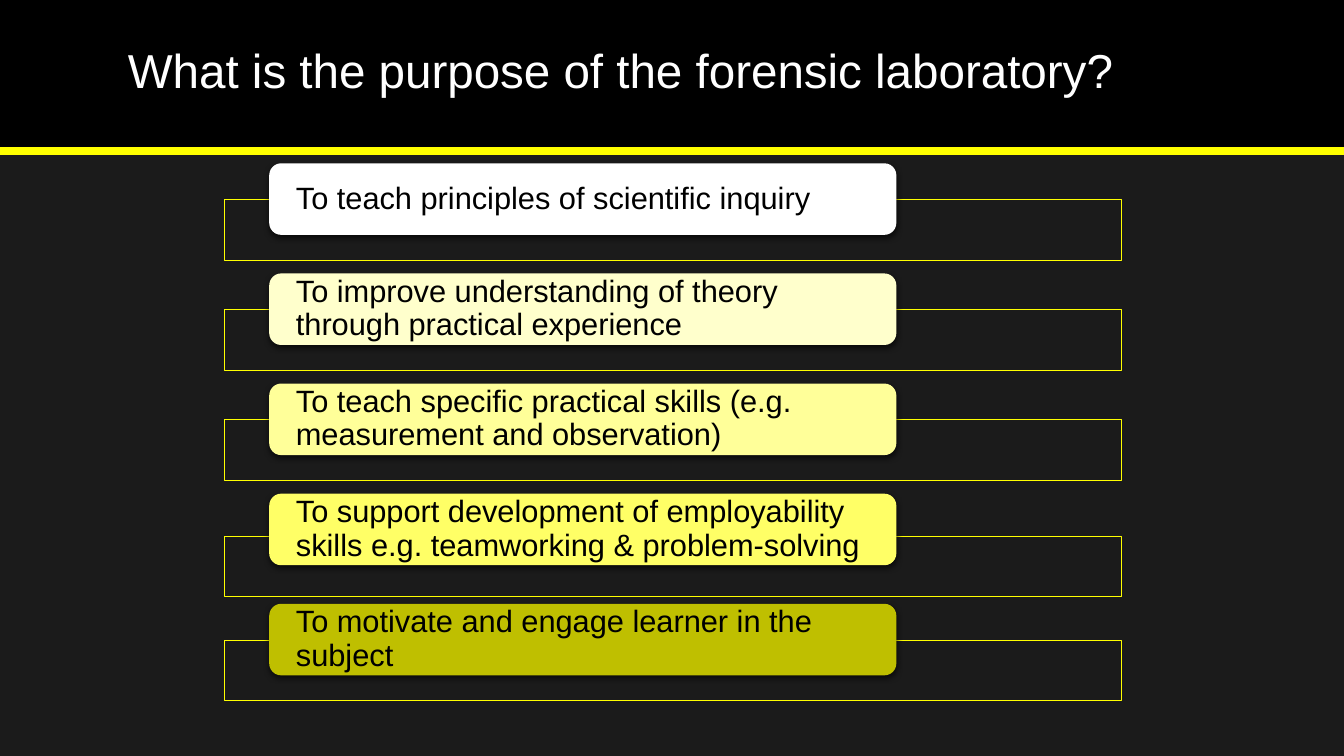
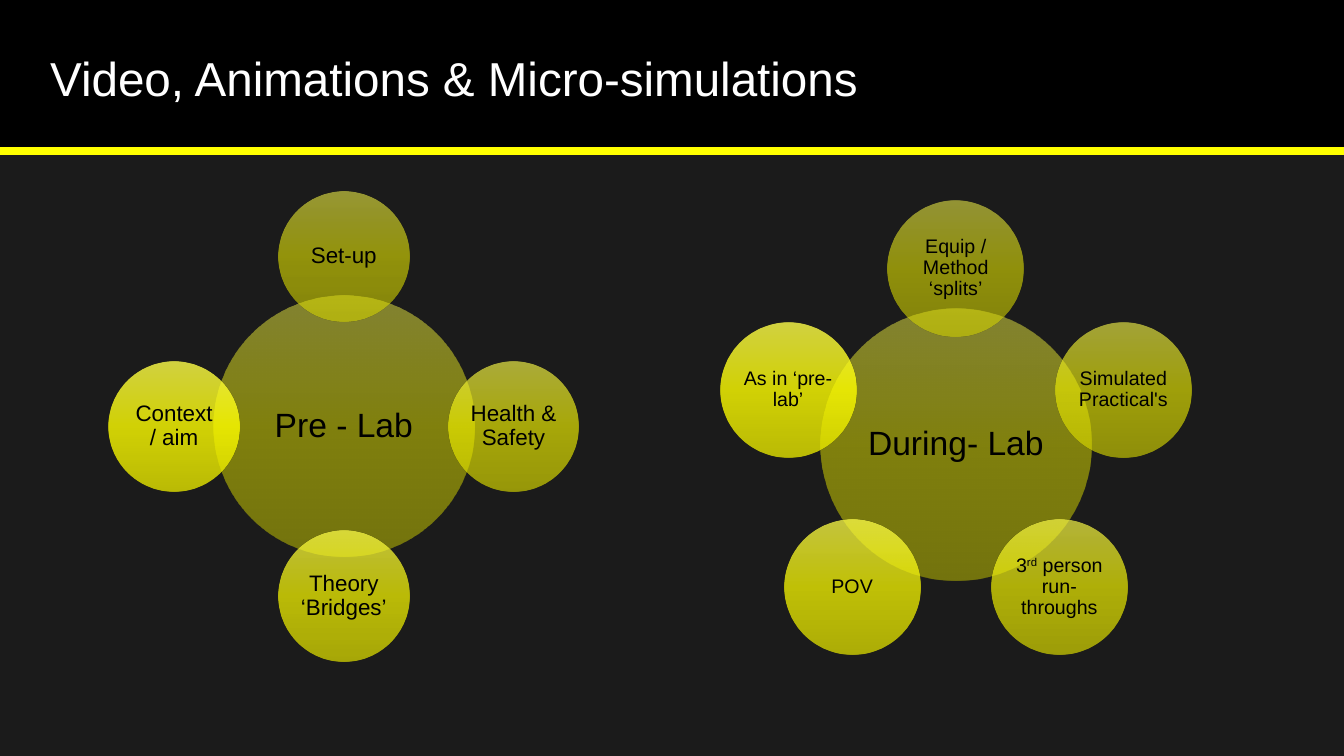
from math import cos, radians, sin

from lxml.etree import SubElement
from pptx import Presentation
from pptx.dml.color import RGBColor
from pptx.enum.shapes import MSO_CONNECTOR, MSO_SHAPE
from pptx.enum.text import MSO_ANCHOR, PP_ALIGN
from pptx.oxml.ns import qn
from pptx.util import Inches, Pt

# Shared look
COLORS = {
    "background": "1B1B1B",
    "band": "000000",
    "accent": "FFFF00",
    "title": "FFFFFF",
    "text": "000000",
}
WIDTH, HEIGHT, BAND_HEIGHT = 13.33, 7.5, 1.5
TITLE = {"size": Pt(34), "name": "Arial"}

# Slide content
PURPOSES = [
    ("To teach principles of scientific inquiry", "FFFFFF"),
    ("To improve understanding of theory through practical experience", "FFFFCC"),
    ("To teach specific practical skills (e.g. measurement and observation)", "FFFF99"),
    ("To support development of employability skills e.g. teamworking & problem-solving",
     "FFFF66"),
    ("To motivate and engage learner in the subject", "BFBF00"),
]
FIRST_ROW, LAST_ROW = 1.62, 5.99
FRAME_OFFSETS = [0.36, 0.36, 0.36, 0.42, 0.36]
PRE_LAB = ["Set-up", "Health & Safety", "Theory ‘Bridges’", "Context / aim"]
# Text between carets is superscript
DURING_LAB = ["Equip / Method ‘splits’", "Simulated Practical's",
              "3^rd^ person run-throughs", "POV", "As in ‘pre-lab’"]


def rgb(value):
    return RGBColor.from_string(value)


def write_text(sp, text, font, color=COLORS["text"], align=PP_ALIGN.LEFT,
               margins=(0.1, 0.05)):
    tf = sp.text_frame
    mx, my = (Inches(m) for m in margins)
    frame = {"word_wrap": True, "vertical_anchor": MSO_ANCHOR.MIDDLE,
             "margin_left": mx, "margin_right": mx,
             "margin_top": my, "margin_bottom": my}
    for key, value in frame.items():
        setattr(tf, key, value)
    p = tf.paragraphs[0]
    p.alignment = align
    p.line_spacing = 0.9
    for i, part in enumerate(text.split("^")):
        r = p.add_run()
        r.text = part
        for key, value in font.items():
            setattr(r.font, key, value)
        r.font.color.rgb = rgb(color)
        if i % 2:
            r.font._element.set("baseline", "30000")


def add_box(s, kind, box, fill=None, line=None):
    sp = s.shapes.add_shape(kind, *map(Inches, box))
    sp.shadow.inherit = False
    if fill:
        sp.fill.solid()
        sp.fill.fore_color.rgb = rgb(fill)
    else:
        sp.fill.background()
    if line:
        sp.line.color.rgb = rgb(line)
        sp.line.width = Pt(0.5)
    else:
        sp.line.fill.background()
    return sp


def add_rule(s, y):
    line = s.shapes.add_connector(MSO_CONNECTOR.STRAIGHT, 0, Inches(y),
                                  Inches(WIDTH), Inches(y))
    line.line.color.rgb = rgb(COLORS["accent"])
    line.line.width = Pt(6)
    SubElement(line._element.spPr, qn("a:effectLst"))


def add_color(parent, value, opacity):
    color = SubElement(parent, qn("a:srgbClr"), val=value)
    SubElement(color, qn("a:alpha"), val=str(round(opacity * 1000)))


def add_drop_shadow(sp):
    effects = sp._element.spPr.find(qn("a:effectLst"))
    shadow = SubElement(effects, qn("a:outerShdw"), blurRad=str(Pt(4.5)),
                        dist=str(Pt(1.5)), dir="5400000", algn="ctr",
                        rotWithShape="0")
    add_color(shadow, "000000", 63)


def add_glass_circle(s, cx, cy, size, share, text, points, margin):
    """Translucent yellow circle, brighter and denser as share goes from 0 to 1."""
    box = (cx - size / 2, cy - size / 2, size, size)
    sp = add_box(s, MSO_SHAPE.OVAL, box)
    sp.fill.gradient()
    sp.fill.gradient_angle = 270
    stops = sp._element.spPr.find(".//" + qn("a:gsLst"))
    for stop in list(stops):
        stops.remove(stop)
    level = 231 + 24 * share
    shades = [(min(level + 6, 255), 75), (level, 0), (level * 0.89, 0)]
    for i, (yellow, blue) in enumerate(shades):
        stop = SubElement(stops, qn("a:gs"), pos=str(i * 50000))
        value = f"{int(yellow):02X}" * 2 + f"{blue:02X}"
        add_color(stop, value, 50 + 30 * share)
    write_text(sp, text, {"size": Pt(points), "name": "Arial"},
               align=PP_ALIGN.CENTER, margins=(margin, margin))


def add_radial(s, cx, cy, hub_size, hub, labels, points):
    add_glass_circle(s, cx, cy, hub_size, 0, hub, 24, 0.03)
    count, reach = len(labels), hub_size * 0.65
    for i, label in enumerate(labels):
        angle = radians(360 * i / count)
        add_glass_circle(s, cx + reach * sin(angle), cy - reach * cos(angle),
                         hub_size / 2, (i + 1) / count, label, points, 0.02)


def add_slide(prs, title, left, top):
    s = prs.slides.add_slide(prs.slide_layouts[6])
    add_box(s, MSO_SHAPE.RECTANGLE, (0, 0, WIDTH, BAND_HEIGHT), COLORS["band"])
    add_rule(s, BAND_HEIGHT)
    sp = s.shapes.add_textbox(*map(Inches, (left, top, 11, 1.2)))
    write_text(sp, title, TITLE, color=COLORS["title"])
    return s


def add_purposes(s):
    font = {"size": Pt(22), "name": "Arial"}
    step = (LAST_ROW - FIRST_ROW) / (len(PURPOSES) - 1)
    for i, ((text, fill), offset) in enumerate(zip(PURPOSES, FRAME_OFFSETS)):
        y = FIRST_ROW + step * i
        add_box(s, MSO_SHAPE.RECTANGLE, (2.23, y + offset, 8.89, 0.6),
                line=COLORS["accent"])
        sp = add_box(s, MSO_SHAPE.ROUNDED_RECTANGLE, (2.67, y, 6.22, 0.71), fill)
        add_drop_shadow(sp)
        write_text(sp, text, font, margins=(0.23, 0))


def main():
    prs = Presentation()
    prs.slide_width, prs.slide_height = Inches(WIDTH), Inches(HEIGHT)
    background = prs.slide_master.background.fill
    background.solid()
    background.fore_color.rgb = rgb(COLORS["background"])

    # Purpose list
    s = add_slide(prs, "What is the purpose of the forensic laboratory?", 1.17, 0.13)
    add_purposes(s)

    # Two radial diagrams
    s = add_slide(prs, "Video, Animations & Micro-simulations", 0.4, 0.2)
    add_radial(s, 3.41, 4.23, 2.59, "Pre - Lab", PRE_LAB, 16)
    add_radial(s, 9.48, 4.41, 2.69, "During- Lab", DURING_LAB, 14)

    prs.save("out.pptx")


if __name__ == "__main__":
    main()
